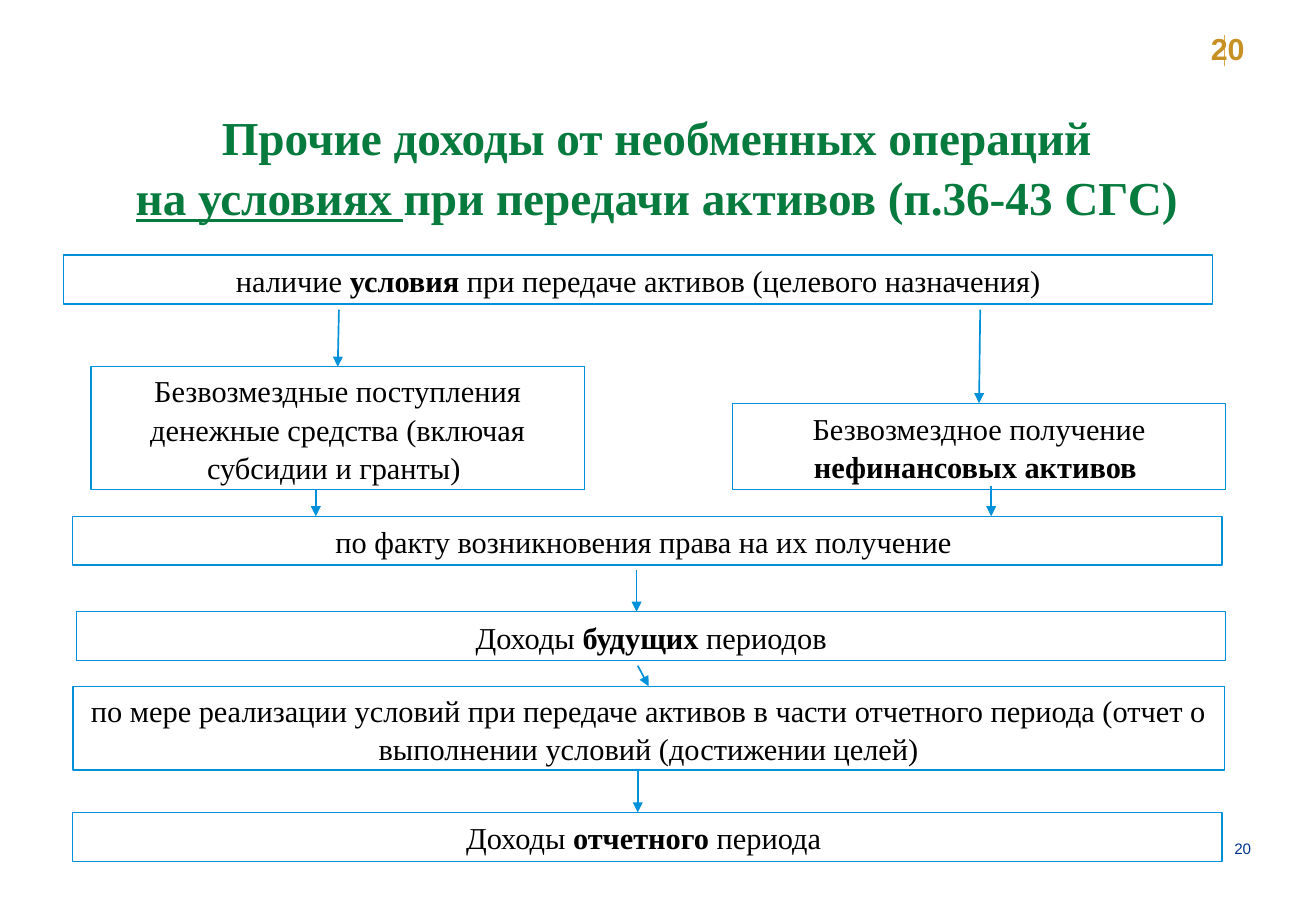
from lxml import etree
from pptx import Presentation
from pptx import util as u
from pptx.dml.color import RGBColor
from pptx.enum import shapes, text
from pptx.oxml import ns

SERIF, SANS = "Times New Roman", "Arial"
BLUE, GREEN, GOLD, PALE_GOLD, NAVY, BLACK = (
    "0091DA", "077A3E", "C79023", "DEAA46", "00338D", "000000")
CENTER, LEFT, RIGHT = text.PP_ALIGN.CENTER, text.PP_ALIGN.LEFT, text.PP_ALIGN.RIGHT


def rgb(value):
    return RGBColor.from_string(value)


class FlowSlide:
    """Draws titles, labels, flow boxes and arrows on one slide."""

    def __init__(self, deck):
        self.slide = deck.slides.add_slide(deck.slide_layouts[5])
        self.items = self.slide.shapes

    def style(self, paragraph, font, size, color, align, bold=None):
        paragraph.alignment = align
        paragraph.font.name = font
        paragraph.font.size = u.Pt(size)
        paragraph.font.color.rgb = rgb(color)
        paragraph.font.bold = bold

    def title(self, place, first_line, underlined, rest):
        heading = self.items.title
        heading.left, heading.top, heading.width, heading.height = map(u.Pt, place)
        frame = heading.text_frame
        frame.auto_size = text.MSO_AUTO_SIZE.NONE
        frame.vertical_anchor = text.MSO_ANCHOR.TOP
        frame.margin_top = u.Pt(5)
        frame.text = first_line
        second_line = frame.add_paragraph()
        condition = second_line.add_run()
        condition.text = underlined
        condition.font.underline = True
        second_line.add_run().text = rest
        for line in frame.paragraphs:
            self.style(line, SERIF, 28, GREEN, CENTER, True)
            line.line_spacing = 1.05

    def label(self, place, words, size, color, align, bold, inset=True):
        frame = self.items.add_textbox(*map(u.Pt, place)).text_frame
        frame.word_wrap = True
        if not inset:
            frame.margin_left = frame.margin_right = 0
            frame.margin_top = frame.margin_bottom = 0
        frame.text = words
        self.style(frame.paragraphs[0], SANS, size, color, align, bold)

    def box(self, place, before, strong="", after=""):
        step = self.items.add_shape(shapes.MSO_SHAPE.RECTANGLE, *map(u.Pt, place))
        step.shadow.inherit = False
        step.fill.background()
        step.line.color.rgb = rgb(BLUE)
        step.line.width = u.Pt(0.75)
        frame = step.text_frame
        frame.word_wrap = True
        frame.vertical_anchor = text.MSO_ANCHOR.MIDDLE
        wording = frame.paragraphs[0]
        self.style(wording, SERIF, 18, BLACK, CENTER)
        wording.line_spacing = 1.05
        for part in filter(None, (before, strong, after)):
            run = wording.add_run()
            run.text = part
            if part == strong:
                run.font.bold = True

    def line(self, ends, color, arrow=False):
        link = self.items.add_connector(
            shapes.MSO_CONNECTOR.STRAIGHT, *map(u.Pt, ends))
        link.line.color.rgb = rgb(color)
        link.line.width = u.Pt(1)
        if arrow:
            etree.SubElement(link.line._get_or_add_ln(), ns.qn("a:tailEnd"), type="triangle")
        etree.SubElement(link._element.spPr, ns.qn("a:effectLst"))


def main():
    deck = Presentation()
    deck.slide_width, deck.slide_height = u.Pt(780), u.Pt(540)
    page = FlowSlide(deck)

    page.label((710.6, 497.5, 31, 11.5), "20", 9, NAVY, RIGHT, False, inset=False)
    page.line((725.8, 20.9, 725.8, 38.9), PALE_GOLD)
    page.label((710.6, 14.4, 49.7, 28.8), "20", 18, GOLD, LEFT, True)
    page.title((18, 57.6, 742.3, 92.2), "Прочие доходы от необменных операций",
               "на условиях ", "при передачи активов (п.36-43 СГС)")

    bar, half, row = 681.1, 292.3, 29
    steps = [
        ((37.8, 151.2, bar, row), "наличие ", "условия",
         " при передаче активов (целевого назначения)"),
        ((54, 217.4, half, 72.7),
         "Безвозмездные поступления денежные средства (включая субсидии и гранты) "),
        ((434.2, 239, half, 51.1), "Безвозмездное получение ", "нефинансовых активов "),
        ((43.2, 306, bar, row), "по факту возникновения права на их получение "),
        ((45.4, 362.6, bar, row), "Доходы ", "будущих", " периодов"),
        ((43.2, 406.8, 682.6, 49.7),
         "по мере реализации условий при передаче активов в части отчетного периода "
         "(отчет о выполнении условий (достижении целей)"),
        ((43.2, 481.5, bar, row), "Доходы ", "отчетного", " периода "),
    ]
    for step in steps:
        page.box(*step)

    arrows = [
        (200.9, 183.6, 200.2, 217.4),
        (581, 183.6, 580.3, 239),
        (187.2, 290.1, 187.2, 306),
        (587.5, 288, 587.5, 306),
        (377.3, 337.7, 377.3, 362.6),
        (378, 394.6, 384.5, 406.8),
        (378, 456.5, 378, 481.5),
    ]
    for ends in arrows:
        page.line(ends, BLUE, arrow=True)

    deck.save("out.pptx")


if __name__ == "__main__":
    main()
